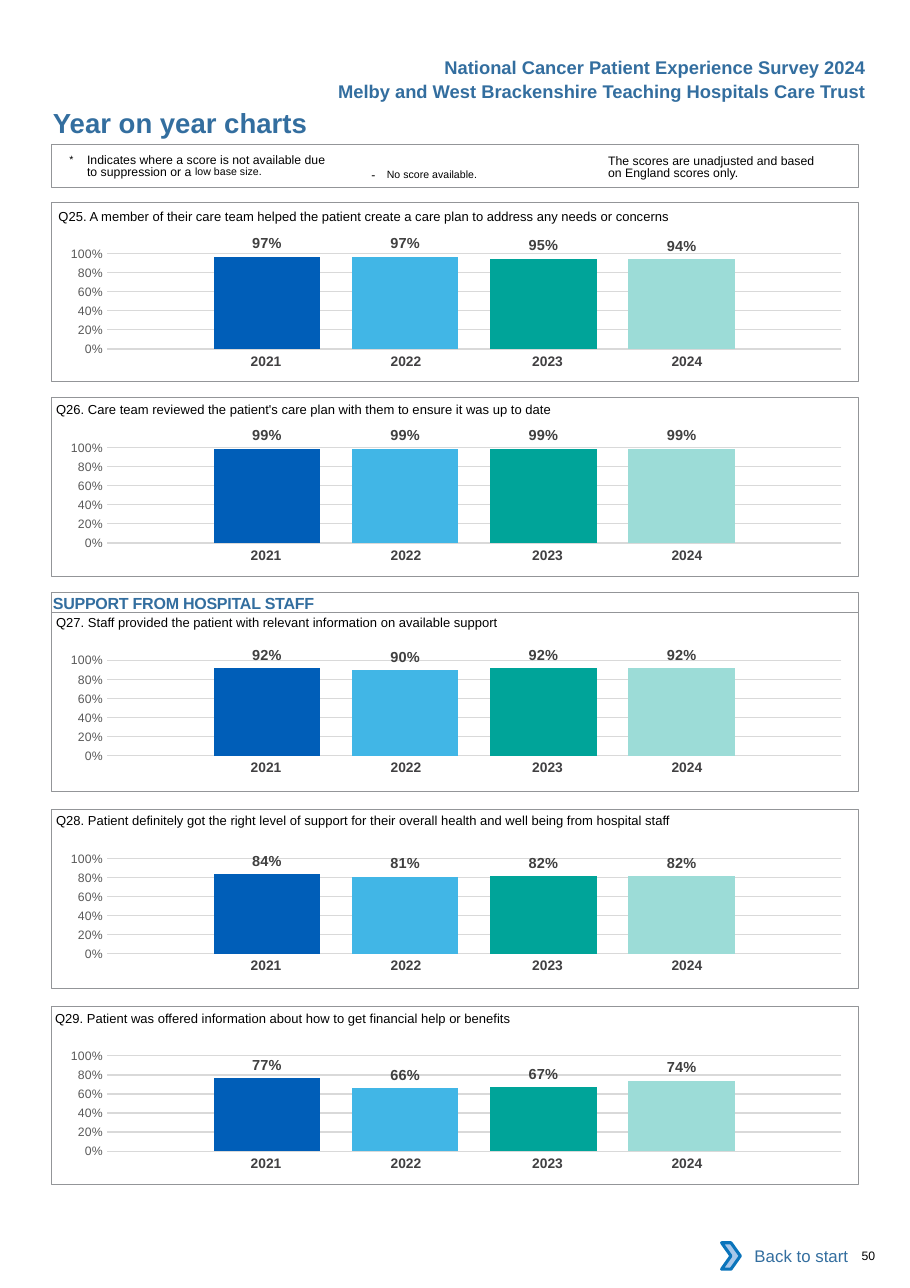
from lxml import etree
from pptx import Presentation
from pptx import util as u
from pptx.chart import data
from pptx.dml.color import RGBColor
from pptx.enum import chart as ch, shapes, text
from pptx.oxml.ns import qn

HEADING_BLUE = RGBColor(0x33, 0x6E, 0x9F)
BLACK = RGBColor(0, 0, 0)
WHITE = RGBColor(0xFF, 0xFF, 0xFF)
FRAME_GREY = RGBColor(0x93, 0x95, 0x98)
GRID_GREY = RGBColor(0xD9, 0xD9, 0xD9)
AXIS_GREY = RGBColor(0x59, 0x59, 0x59)
LABEL_GREY = RGBColor(0x40, 0x40, 0x40)
YEAR_GREY = RGBColor(0x41, 0x40, 0x42)
CHEVRON_FILL = RGBColor(0xA8, 0xC7, 0xE9)
CHEVRON_EDGE = RGBColor(0x0A, 0x74, 0xBB)

# Year, bar colour, column width and right margin of its caption
YEARS = [
    ("2021", RGBColor(0x00, 0x5E, 0xB8), 15.38, 0),
    ("2022", RGBColor(0x41, 0xB6, 0xE6), 15.38, 0),
    ("2023", RGBColor(0x00, 0xA4, 0x99), 16.22, 0.48),
    ("2024", RGBColor(0x9C, 0xDC, 0xD7), 15.38, 1.45),
]

# Question, its left, then tops of question, frame and chart, then scores
QUESTIONS = [
    ("Q25. A member of their care team helped the patient create a care plan "
     "to address any needs or concerns",
     6.42, 15.4, 15.74, 18.05, (0.97, 0.97, 0.95, 0.94)),
    ("Q26. Care team reviewed the patient's care plan with them to ensure it was up to date",
     6.17, 30.37, 30.88, 33.11, (0.99, 0.99, 0.99, 0.99)),
    ("Q27. Staff provided the patient with relevant information on available support",
     6.17, 46.96, 47.56, 49.62, (0.92, 0.9, 0.92, 0.92)),
    ("Q28. Patient definitely got the right level of support for their overall "
     "health and well being from hospital staff",
     6.17, 62.28, 62.87, 65.01, (0.84, 0.81, 0.82, 0.82)),
    ("Q29. Patient was offered information about how to get financial help or benefits",
     6.05, 77.67, 78.1, 80.33, (0.77, 0.66, 0.67, 0.74)),
]
FRAME_LEFT, FRAME_WIDTH, FRAME_HEIGHT = 5.69, 88.62, 13.86
CHART_LEFT, CHART_HEIGHT = 4.72, 11.04
YEARS_LEFT, YEARS_DROP, YEARS_HEIGHT = 20.94, 8.98, 2.31
PLOT_AREA = {"x": 0.08, "y": 0.15, "w": 0.91, "h": 0.67}


class Page:
    """Places elements on a grid of 100 columns by 100 rows."""

    font = "Arial"

    def __init__(self, deck):
        self.width, self.height = deck.slide_width, deck.slide_height
        self.slide = deck.slides.add_slide(deck.slide_layouts[5])
        self.shapes = self.slide.shapes

    def cols(self, count):
        return u.Emu(round(self.width * count / 100))

    def rows(self, count):
        return u.Emu(round(self.height * count / 100))

    def box(self, left, top, width, height):
        return self.cols(left), self.rows(top), self.cols(width), self.rows(height)

    def style(self, font, size, color, bold=False):
        font.name, font.size, font.bold = self.font, u.Pt(size), bold
        font.color.rgb = color

    def fill_frame(self, frame, parts, size=8, color=BLACK, bold=False, align="LEFT",
                   insets=(0, 0), anchor="TOP", leading=None):
        """Fill a frame with parts: (words, size, baseline in %, letter spacing in pt)."""
        if isinstance(parts, str):
            parts = [(parts, size, 0, 0)]
        frame.word_wrap = True
        frame.vertical_anchor = text.MSO_ANCHOR[anchor]
        frame.margin_left = frame.margin_right = self.cols(insets[0])
        frame.margin_top, frame.margin_bottom = self.rows(insets[1]), 0
        line = frame.paragraphs[0]
        line.alignment = text.PP_ALIGN[align]
        if leading:
            line.line_spacing = u.Pt(leading)
        for words, points, baseline, spacing in parts:
            run = line.add_run()
            run.text = words
            self.style(run.font, points, color, bold)
            properties = run._r.get_or_add_rPr()
            if baseline:
                properties.set("baseline", str(baseline * 1000))
            if spacing:
                properties.set("spc", str(round(spacing * 100)))
        return line

    def title(self, words, place):
        heading = self.shapes.title
        heading.left, heading.top, heading.width, heading.height = self.box(*place)
        self.fill_frame(heading.text_frame, words, 18, HEADING_BLUE, True)

    def words(self, parts, place, **look):
        textbox = self.shapes.add_textbox(*self.box(*place))
        return self.fill_frame(textbox.text_frame, parts, **look)

    def outline(self, place, kind="RECTANGLE", fill=None, edge=FRAME_GREY, weight=0.5):
        shape = self.shapes.add_shape(shapes.MSO_SHAPE[kind], *self.box(*place))
        shape.shadow.inherit = False
        if fill is None:
            shape.fill.background()
        else:
            shape.fill.solid()
            shape.fill.fore_color.rgb = fill
        if edge is None:
            shape.line.fill.background()
        else:
            shape.line.color.rgb, shape.line.width = edge, u.Pt(weight)
        return shape

    def year_row(self, top):
        place = self.box(YEARS_LEFT, top, sum(y[2] for y in YEARS), YEARS_HEIGHT)
        table = self.shapes.add_table(1, len(YEARS), *place).table
        table.first_row = table.horz_banding = False
        for index, (year, _, width, right) in enumerate(YEARS):
            table.columns[index].width = self.cols(width)
            cell = table.cell(0, index)
            cell.fill.background()
            cell.margin_left, cell.margin_right = self.cols(1.21), self.cols(right)
            cell.margin_top = cell.margin_bottom = self.rows(0.43)
            cell.text_frame.text = year
            caption = cell.text_frame.paragraphs[0]
            caption.alignment = text.PP_ALIGN.CENTER
            self.style(caption.runs[0].font, 9, YEAR_GREY, True)

    def score_chart(self, top, scores):
        values = data.CategoryChartData(number_format="0%")
        values.categories = ["1"]
        for index, score in enumerate(scores, 1):
            values.add_series(f"Series {index}", [score])
        chart = self.shapes.add_chart(
            ch.XL_CHART_TYPE.COLUMN_CLUSTERED,
            *self.box(CHART_LEFT, top, FRAME_WIDTH, CHART_HEIGHT), values).chart
        chart.has_legend = chart.has_title = False
        chart.font.name, chart.font.size = "Calibri", u.Pt(10)
        chart.font.color.rgb = BLACK
        chart.category_axis.visible = False
        self.score_axis(chart.value_axis)
        bars = chart.plots[0]
        bars.gap_width, bars.overlap, bars.vary_by_categories = 200, -30, False
        for series, (_, color, _, _) in zip(bars.series, YEARS):
            series.format.fill.solid()
            series.format.fill.fore_color.rgb = color
            labels = series.data_labels
            labels.show_value = True
            labels.position = ch.XL_LABEL_POSITION.OUTSIDE_END
            labels.number_format, labels.number_format_is_linked = "0%", False
            self.style(labels.font, 9.5, LABEL_GREY, True)
        self.fix_plot_area(chart)

    def score_axis(self, axis):
        axis.minimum_scale, axis.maximum_scale, axis.major_unit = 0, 1, 0.2
        axis.major_tick_mark = axis.minor_tick_mark = ch.XL_TICK_MARK.NONE
        axis.format.line.fill.background()
        axis.major_gridlines.format.line.color.rgb = GRID_GREY
        axis.major_gridlines.format.line.width = u.Pt(0.75)
        axis.tick_labels.number_format = "0%"
        axis.tick_labels.number_format_is_linked = False
        self.style(axis.tick_labels.font, 8, AXIS_GREY)

    @staticmethod
    def fix_plot_area(chart):
        area = chart._chartSpace.chart.plotArea
        for old in area.findall(qn("c:layout")):
            area.remove(old)
        layout = etree.Element(qn("c:layout"))
        area.insert(0, layout)
        manual = etree.SubElement(layout, qn("c:manualLayout"))
        settings = {"layoutTarget": "inner", "xMode": "edge", "yMode": "edge", **PLOT_AREA}
        for name, value in settings.items():
            etree.SubElement(manual, qn(f"c:{name}")).set("val", str(value))


def add_notes_box(page):
    page.words("The scores are unadjusted and based on England scores only.",
               (66.83, 11.8, 23.61, 2.31), insets=(0, 0.26), leading=8.1)
    page.words([("- ", 8, 0, 2.6), ("No score available.", 12, 3, 0)],
               (39.59, 12.06, 22.15, 2.05), insets=(1.21, 0.43))
    suppression = page.words(
        [("*\t", 12, 3, 0),
         ("Indicates where a score is not available due to suppression or a ", 8, 0, 0),
         ("low base size.", 12, 7, 0)],
        (7.63, 11.8, 29.06, 2.31), insets=(0, 0.26), leading=8.1)
    hanging = page.cols(1.94)
    suppression._p.get_or_add_pPr().set("marL", str(hanging))
    suppression._p.get_or_add_pPr().set("indent", str(-hanging))
    page.outline((FRAME_LEFT, 11.21, FRAME_WIDTH, 3.34), weight=0.75)


def main():
    deck = Presentation()
    deck.slide_width, deck.slide_height = u.Inches(8.26), u.Inches(11.69)
    page = Page(deck)

    page.title("Year on year charts", (5.81, 8.21, 54.48, 2.57))
    for top, heading in ((3.93, "National Cancer Patient Experience Survey 2024"),
                         (5.82, "Melby and West Brackenshire Teaching Hospitals Care Trust")):
        page.words(heading, (30.27, top, 66.1, 2.57), size=12, color=HEADING_BLUE,
                   bold=True, align="RIGHT", insets=(1.21, 0.43))
    add_notes_box(page)

    for question, left, question_top, frame_top, chart_top, scores in QUESTIONS:
        page.year_row(chart_top + YEARS_DROP)
        page.score_chart(chart_top, scores)
        page.outline((FRAME_LEFT, frame_top, FRAME_WIDTH, FRAME_HEIGHT))
        page.words(question, (left, question_top, FRAME_WIDTH, 2.05),
                   size=8.5, insets=(0, 0.77))

    section = page.outline((FRAME_LEFT, 46.02, FRAME_WIDTH, 1.54))
    page.fill_frame(section.text_frame, [("SUPPORT FROM HOSPITAL STAFF", 10.5, 0, -0.15)],
                    color=HEADING_BLUE, bold=True, insets=(0.12, 0.09))

    back = page.outline((80.15, 95.72, 14.29, 3.59), fill=WHITE, edge=None)
    page.fill_frame(back.text_frame, "Back to start", 11, HEADING_BLUE, align="RIGHT",
                    insets=(1.21, 0), anchor="MIDDLE")
    page.outline((79.3, 96.49, 2.06, 2.05), "CHEVRON", CHEVRON_FILL, CHEVRON_EDGE, 2)
    page.words("50", (94.67, 96.92, 4.96, 1.11))
    deck.save("out.pptx")


if __name__ == "__main__":
    main()
